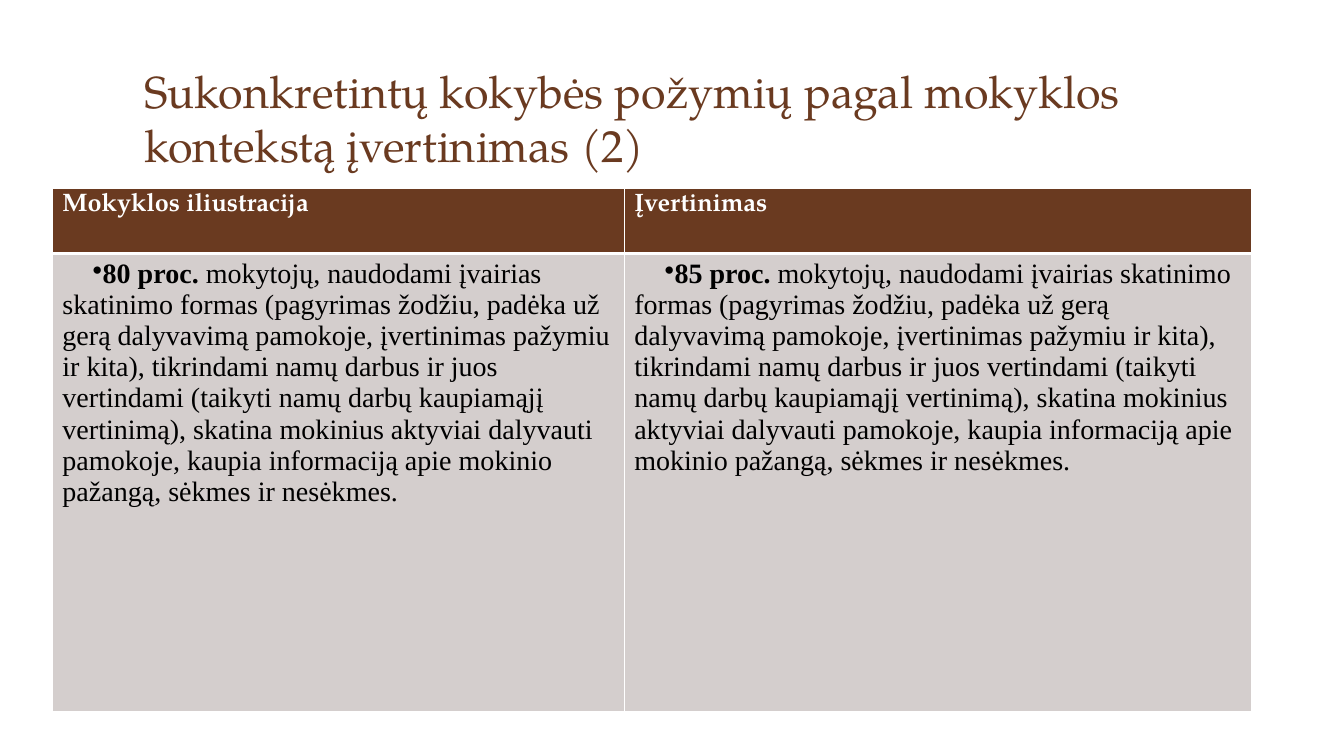
from dataclasses import dataclass

from lxml import etree
from pptx import Presentation
from pptx import util as u
from pptx.dml.color import RGBColor
from pptx.enum import text
from pptx.oxml import ns


@dataclass(frozen=True)
class Theme:
    brown: str = "6A3A20"
    grey: str = "D4CECD"
    white: str = "FFFFFF"
    black: str = "000000"
    serif: str = "TeX Gyre Pagella"
    roman: str = "Times New Roman"
    title: int = 32
    head: int = 18
    body: int = 20


THEME = Theme()
TITLE = "Sukonkretintų kokybės požymių pagal mokyklos kontekstą įvertinimas (2)"
HEADS = ("Mokyklos iliustracija", "Įvertinimas")
SHARES = ("80 proc. ", "85 proc. ")
CLAIM = (
    "mokytojų, naudodami įvairias skatinimo formas (pagyrimas žodžiu, "
    "padėka už gerą dalyvavimą pamokoje, įvertinimas pažymiu ir kita), "
    "tikrindami namų darbus ir juos vertindami (taikyti namų darbų "
    "kaupiamąjį vertinimą), skatina mokinius aktyviai dalyvauti pamokoje, "
    "kaupia informaciją apie mokinio pažangą, sėkmes ir nesėkmes."
)


def add_run(para, words, size, face, color, bold=False):
    run = para.add_run()
    run.text = words
    font = run.font
    font.size, font.name, font.bold = u.Pt(size), face, bold
    font.color.rgb = RGBColor.from_string(color)


def add_mark(para):
    """Bullet with a first-line indent and a tab stop after it."""
    props = para._p.get_or_add_pPr()
    props.set("marL", "0")
    props.set("indent", str(u.Inches(0.3)))
    etree.SubElement(props, ns.qn("a:buChar"), char="•")
    tabs = etree.SubElement(props, ns.qn("a:tabLst"))
    for stop in (0.3, 0.39):
        etree.SubElement(tabs, ns.qn("a:tab"), pos=str(u.Inches(stop)), algn="l")


def style_cell(cell, fill, base):
    """White borders, with a chosen bottom width, then the fill."""
    props = cell._tc.get_or_add_tcPr()
    for side, width in (("L", 1), ("R", 1), ("T", 1), ("B", base)):
        line = etree.SubElement(props, ns.qn(f"a:ln{side}"), w=str(u.Pt(width)))
        paint = etree.SubElement(line, ns.qn("a:solidFill"))
        etree.SubElement(paint, ns.qn("a:srgbClr"), val=THEME.white)
    cell.fill.solid()
    cell.fill.fore_color.rgb = RGBColor.from_string(fill)


def add_title(slide, box):
    frame = slide.shapes.add_textbox(*box).text_frame
    frame.word_wrap = True
    frame.vertical_anchor = text.MSO_ANCHOR.BOTTOM
    add_run(frame.paragraphs[0], TITLE, THEME.title, THEME.serif, THEME.brown)


def add_grid(slide, box, cols, rows):
    """Table whose columns and rows are shares of its box."""
    table = slide.shapes.add_table(len(rows), len(cols), *box).table
    for col, share in zip(table.columns, cols):
        col.width = int(box[2] * share)
    for row, share in zip(table.rows, rows):
        row.height = int(box[3] * share)
    for idx, (head, share) in enumerate(zip(HEADS, SHARES)):
        # Header cell
        top = table.cell(0, idx)
        style_cell(top, THEME.brown, 3)
        add_run(top.text_frame.paragraphs[0], head,
                THEME.head, THEME.serif, THEME.white, True)
        # Body cell
        cell = table.cell(1, idx)
        style_cell(cell, THEME.grey, 1)
        para = cell.text_frame.paragraphs[0]
        add_mark(para)
        for words, bold in ((share, True), (CLAIM, False)):
            add_run(para, words, THEME.body, THEME.roman, THEME.black, bold)


def main():
    deck = Presentation()
    deck.slide_width, deck.slide_height = u.Inches(13.33), u.Inches(7.5)
    slide = deck.slides.add_slide(deck.slide_layouts[6])

    def place(*box):
        sides = (deck.slide_width, deck.slide_height) * 2
        return [int(side * part) for side, part in zip(sides, box)]

    add_title(slide, place(0.1, 0.063, 0.8, 0.17))
    add_grid(slide, place(0.039, 0.249, 0.892, 0.692),
             cols=(0.477, 0.523), rows=(0.125, 0.875))
    deck.save("out.pptx")


if __name__ == "__main__":
    main()
